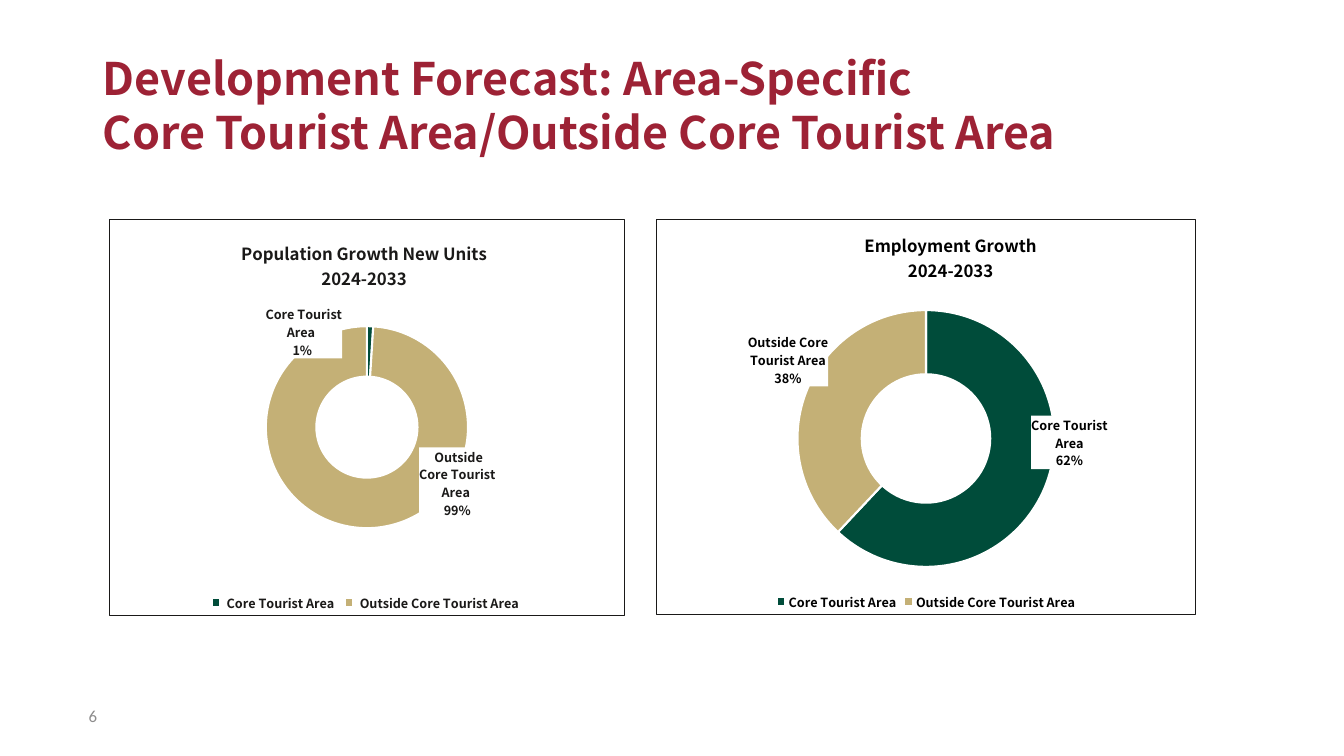
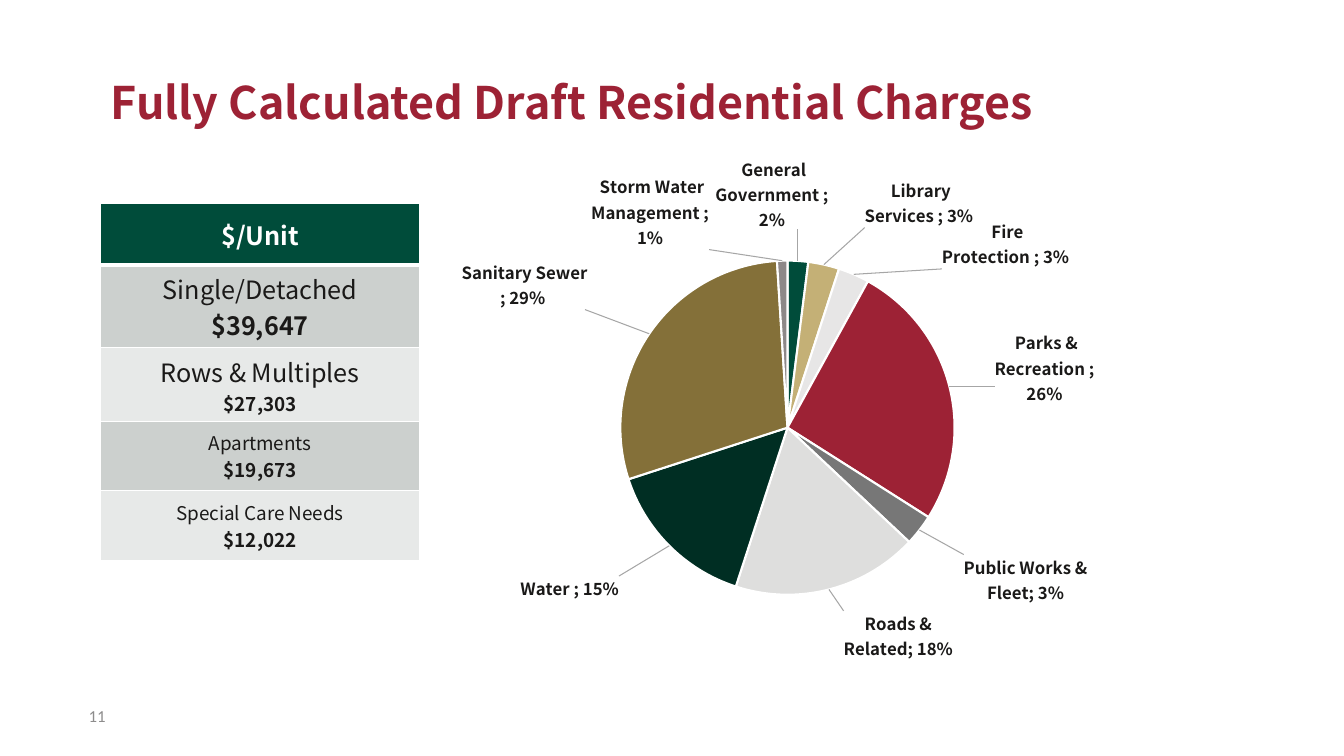
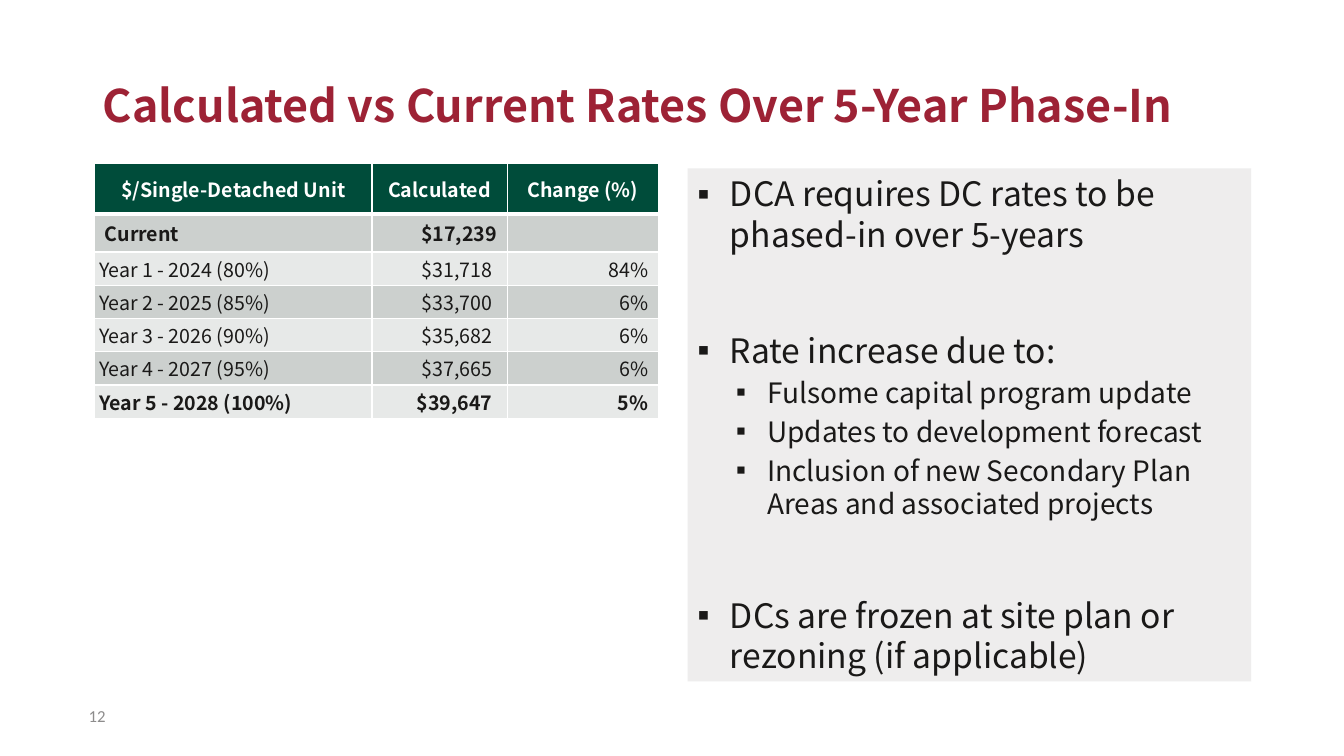
from copy import deepcopy

from pptx import Presentation
from pptx.chart.data import CategoryChartData
from pptx.dml.color import RGBColor
from pptx.enum.chart import XL_CHART_TYPE as ChartType, XL_LEGEND_POSITION as LegendPos
from pptx.enum.text import MSO_ANCHOR as Anchor, MSO_AUTO_SIZE as AutoSize, PP_ALIGN as Align
from pptx.oxml import parse_xml
from pptx.oxml.ns import nsdecls, qn
from pptx.util import Inches, Pt

SANS = "Noto Sans CJK JP"
NUMBER_FONT = BULLET_FONT = "Calibri"

INK = RGBColor(0x1A, 0x19, 0x18)
BLACK = RGBColor(0, 0, 0)
WHITE = RGBColor(0xFF, 0xFF, 0xFF)
CRIMSON = RGBColor(0x9D, 0x22, 0x35)
GREEN = RGBColor(0x00, 0x4C, 0x3A)
DARK_GREEN = RGBColor(0x00, 0x2E, 0x23)
GOLD = RGBColor(0xC4, 0xB0, 0x76)
BRONZE = RGBColor(0x84, 0x70, 0x39)
PALE = RGBColor(0xE7, 0xE6, 0xE6)
LIGHT_GREY = RGBColor(0xDE, 0xDE, 0xDD)
MID_GREY = RGBColor(0x77, 0x77, 0x77)
WARM_GREY = RGBColor(0x8D, 0x88, 0x88)
NUMBER_GREY = RGBColor(0x8D, 0x8C, 0x8C)
LEADER_GREY = RGBColor(0xA6, 0xA6, 0xA6)
BANDS = (RGBColor(0xCC, 0xD0, 0xCE), RGBColor(0xE7, 0xE9, 0xE8))

TITLE_ONLY, TITLE_AND_BODY = 5, 1


def write(frame, text, size=14, color=INK, bold=False, font=SANS, align=None, before=None):
    """Add one paragraph; a newline in the text becomes a line break."""
    paragraph = frame.paragraphs[-1]
    if paragraph.runs:
        paragraph = frame.add_paragraph()
    paragraph.alignment = align
    paragraph.space_before = None if before is None else Pt(before)
    for index, line in enumerate(text.split("\n")):
        if index:
            paragraph.add_line_break()
        run = paragraph.add_run()
        run.text = line
        run.font.size, run.font.bold, run.font.name = Pt(size), bold, font
        run.font.color.rgb = color
    for line_break in paragraph._p.findall(qn("a:br")):
        line_break.append(deepcopy(paragraph.runs[0]._r.rPr))
    return paragraph


def place(shape, box):
    shape.left, shape.top, shape.width, shape.height = map(Inches, box)


def new_slide(prs, layout, title, number, title_at=(0.92, 0.4)):
    slide = prs.slides.add_slide(prs.slide_layouts[layout])
    place(slide.shapes.title, (*title_at, 11.5, 1.27))
    frame = slide.shapes.title.text_frame
    frame.word_wrap, frame.auto_size = True, AutoSize.NONE
    frame.vertical_anchor = Anchor.MIDDLE
    write(frame, title, size=32, color=CRIMSON, bold=True, align=Align.LEFT)

    page = slide.shapes.add_textbox(*map(Inches, (0.78, 6.9, 1.11, 0.4))).text_frame
    page.word_wrap, page.vertical_anchor = True, Anchor.MIDDLE
    write(page, str(number), size=12, color=NUMBER_GREY, font=NUMBER_FONT)
    return slide


# Tables

def style_cell(cell, fill, bottom=1):
    """White borders, with the bottom one in its own width, and a solid fill."""
    properties = cell._tc.get_or_add_tcPr()
    for side, width in (("L", 1), ("R", 1), ("T", 1), ("B", bottom)):
        properties.append(parse_xml(
            f'<a:ln{side} {nsdecls("a")} w="{Pt(width)}"><a:solidFill>'
            f'<a:srgbClr val="{WHITE}"/></a:solidFill></a:ln{side}>'))
    cell.fill.solid()
    cell.fill.fore_color.rgb = fill
    cell.vertical_anchor = Anchor.MIDDLE


def set_margins(cell, left, right):
    cell.margin_left, cell.margin_right = Inches(left), Inches(right)
    cell.margin_top = cell.margin_bottom = 0


def banded_table(slide, at, columns, heights):
    table = slide.shapes.add_table(
        len(heights), len(columns), *map(Inches, (*at, sum(columns), sum(heights)))).table
    table.horz_banding = False
    for column, width in zip(table.columns, columns):
        column.width = Inches(width)
    for index, (row, height) in enumerate(zip(table.rows, heights)):
        row.height = Inches(height)
        for cell in row.cells:
            if index == 0:
                style_cell(cell, GREEN, bottom=3)
            else:
                style_cell(cell, BANDS[(index - 1) % 2])
    return table


def unit_table(slide, at):
    charges = [("Single/Detached", 18, "$39,647", 18),
               ("Rows & Multiples", 18, "$27,303", 13.5),
               ("Apartments", 13.5, "$19,673", 13.5),
               ("Special Care Needs", 13.5, "$12,022", 13.5)]
    table = banded_table(slide, at, [3.16], [0.61, 0.82, 0.73, 0.69, 0.69])
    write(table.cell(0, 0).text_frame, "$/Unit", size=18, color=WHITE, bold=True,
          align=Align.CENTER)
    for row, (unit, unit_size, charge, charge_size) in enumerate(charges, 1):
        frame = table.cell(row, 0).text_frame
        write(frame, unit, size=unit_size, align=Align.CENTER)
        write(frame, charge, size=charge_size, bold=True, align=Align.CENTER)


def phase_in_table(slide, at):
    heads = ("$/Single-Detached Unit", "Calculated", "Change (%)")
    rates = [("Current", "$17,239", ""),
             (" Year 1 - 2024 (80%)", "$31,718 ", "84%"),
             (" Year 2 - 2025 (85%)", "$33,700 ", "6%"),
             (" Year 3 - 2026 (90%)", "$35,682 ", "6%"),
             (" Year 4 - 2027 (95%)", "$37,665 ", "6%"),
             (" Year 5 - 2028 (100%)", "$39,647 ", "5%")]
    table = banded_table(slide, at, [2.75, 1.34, 1.5],
                         [0.5, 0.38] + [0.33] * (len(rates) - 1))
    for column, head in enumerate(heads):
        write(table.cell(0, column).text_frame, head, color=WHITE, bold=True,
              align=Align.CENTER)
    for row, rate in enumerate(rates, 1):
        strong = row in (1, len(rates))
        for column, text in enumerate(rate):
            cell = table.cell(row, column)
            if column:
                set_margins(cell, 0, 0.1)
            elif row > 1:
                set_margins(cell, 0, 0)
            if text:
                write(cell.text_frame, text, bold=strong,
                      align=Align.RIGHT if column else Align.LEFT)


# Charts

def manual_layout(x, y, w=None, h=None, mode=""):
    """Layout element in fractions of the chart; without a mode, x and y are offsets."""
    parts = ""
    if w is not None:
        parts += '<c:layoutTarget val="inner"/>'
    if mode:
        parts += f'<c:xMode val="{mode}"/><c:yMode val="{mode}"/>'
    parts += f'<c:x val="{x}"/><c:y val="{y}"/>'
    if w is not None:
        parts += f'<c:w val="{w}"/><c:h val="{h}"/>'
    return f'<c:layout {nsdecls("c")}><c:manualLayout>{parts}</c:manualLayout></c:layout>'


def set_layout(parent, index, layout):
    for old in parent.findall(qn("c:layout")):
        parent.remove(old)
    parent.insert(index, parse_xml(layout))


def frame_chart(chart, border):
    paint = f'<a:solidFill><a:srgbClr val="{border}"/></a:solidFill>' if border else "<a:noFill/>"
    chart._chartSpace.find(qn("c:chart")).addnext(parse_xml(
        f'<c:spPr {nsdecls("c", "a")}><a:noFill/><a:ln w="{Pt(0.75)}">{paint}</a:ln></c:spPr>'))


def label_slices(series, offsets, percent, separator, position="", fill=None, size=None,
                 leaders=False):
    """Show category and figure beside each slice, moved by its offset."""
    backing = (f'<c:spPr><a:solidFill><a:srgbClr val="{fill}"/></a:solidFill></c:spPr>'
               if fill else "")
    place_at = f'<c:dLblPos val="{position}"/>' if position else ""
    shown = (f'<c:numFmt formatCode="0%" sourceLinked="0"/>{backing}{place_at}'
             f'<c:showLegendKey val="0"/><c:showVal val="{int(not percent)}"/>'
             f'<c:showCatName val="1"/><c:showSerName val="0"/>'
             f'<c:showPercent val="{int(percent)}"/><c:showBubbleSize val="0"/>'
             f'<c:separator>{separator}</c:separator>')
    extent = ""
    if size:
        extent = ('<c:extLst><c:ext uri="{CE6537A1-D6FC-4f65-9D91-7224C49458BB}" '
                  'xmlns:c15="http://schemas.microsoft.com/office/drawing/2012/chart">'
                  f'<c15:layout><c:manualLayout><c:w val="{size[0]}"/><c:h val="{size[1]}"/>'
                  '</c:manualLayout></c15:layout></c:ext></c:extLst>')
    labels = "".join(
        f'<c:dLbl><c:idx val="{index}"/>{manual_layout(*offset)}{shown}{extent}</c:dLbl>'
        for index, offset in enumerate(offsets))
    lines = f'<c:showLeaderLines val="{int(leaders)}"/>'
    if leaders:
        lines += ('<c:leaderLines><c:spPr><a:ln w="9525"><a:solidFill>'
                  f'<a:srgbClr val="{LEADER_GREY}"/></a:solidFill></a:ln></c:spPr>'
                  '</c:leaderLines>')
    series._element.find(qn("c:cat")).addprevious(parse_xml(
        f'<c:dLbls {nsdecls("c", "a")}>{labels}{shown}{lines}</c:dLbls>'))


def round_chart(slide, kind, box, slices, plot_box, size, color=INK, border=None):
    """Pie or doughnut from (category, value, colour) slices."""
    data = CategoryChartData()
    data.categories = [category for category, _, _ in slices]
    data.add_series("Series 1", [value for _, value, _ in slices])
    chart = slide.shapes.add_chart(kind, *map(Inches, box), data).chart
    chart.has_title = chart.has_legend = False
    chart.font.size, chart.font.bold, chart.font.name = Pt(size), True, SANS
    chart.font.color.rgb = color
    frame_chart(chart, border)
    set_layout(chart._chartSpace.find(qn("c:chart")).find(qn("c:plotArea")), 0,
               manual_layout(*plot_box, mode="edge"))
    plot = chart.plots[0]
    plot.vary_by_categories = True
    for index, (_, _, fill) in enumerate(slices):
        look = plot.series[0].points[index].format
        look.fill.solid()
        look.fill.fore_color.rgb = fill
        look.line.color.rgb = WHITE
        look.line.width = Pt(1.5)
    return chart


def growth_doughnut(slide, box, title, title_at, slices, plot_box, offsets, color):
    chart = round_chart(slide, ChartType.DOUGHNUT, box, slices, plot_box, 9, color, border=INK)
    chart.has_title = True
    write(chart.chart_title.text_frame, title, size=12, color=color, bold=True)
    set_layout(chart.chart_title._element, 1, manual_layout(*title_at, mode="edge"))
    chart.has_legend = True
    legend = chart.legend
    legend.position, legend.include_in_layout = LegendPos.BOTTOM, False
    legend.font.size, legend.font.bold, legend.font.name = Pt(9), True, SANS
    legend.font.color.rgb = color
    plot = chart.plots[0]
    plot._element.find(qn("c:holeSize")).set("val", "75")
    label_slices(plot.series[0], offsets, percent=True, separator="\n", fill=WHITE,
                 size=(0.16, 0.14))


def charges_pie(slide, box):
    services = [(" General Government ", 0.02, GREEN, (-0.04, -0.05)),
                (" Library Services ", 0.03, GOLD, (0.06, -0.06)),
                (" Fire Protection ", 0.03, PALE, (0.13, 0)),
                (" Parks & Recreation ", 0.26, CRIMSON, (0.06, 0.04)),
                ("Public Works & Fleet", 0.03, MID_GREY, (0.06, 0.04)),
                ("Roads & Related", 0.18, LIGHT_GREY, (0.02, 0.03)),
                (" Water ", 0.15, DARK_GREEN, (-0.07, 0.05)),
                (" Sanitary Sewer ", 0.29, BRONZE, (-0.09, -0.04)),
                (" Storm Water Management ", 0.01, WARM_GREY, (-0.2, -0.01))]
    chart = round_chart(slide, ChartType.PIE, box, [service[:3] for service in services],
                        (0.24, 0.2, 0.52, 0.64), 12)
    label_slices(chart.plots[0].series[0], [service[3] for service in services],
                 percent=False, separator="; ", position="outEnd", leaders=True)


# List

def bullet(paragraph, left, hang):
    properties = paragraph._p.get_or_add_pPr()
    properties.set("marL", str(Inches(left)))
    properties.set("indent", str(-Inches(hang)))
    properties.append(parse_xml(f'<a:buFont {nsdecls("a")} typeface="{BULLET_FONT}"/>'))
    properties.append(parse_xml(f'<a:buChar {nsdecls("a")} char="▪"/>'))


def reasons_panel(panel, box):
    place(panel, box)
    panel.fill.solid()
    panel.fill.fore_color.rgb = PALE
    panel._element.spPr.find(qn("a:solidFill"))[0].append(
        parse_xml(f'<a:alpha {nsdecls("a")} val="70000"/>'))
    frame = panel.text_frame
    frame.word_wrap, frame.auto_size = True, AutoSize.NONE
    frame.vertical_anchor = Anchor.TOP
    points = [(0, "DCA requires DC rates to be phased-in over 5-years", 0),
              (0, "Rate increase due to:", 54),
              (1, "Fulsome capital program update", 3.8),
              (1, "Updates to development forecast", 3.8),
              (1, "Inclusion of new Secondary Plan Areas and associated projects", 3.8),
              (0, "DCs are frozen at site plan or rezoning (if applicable)", 53)]
    for level, text, before in points:
        paragraph = write(frame, text, size=(24, 20)[level], before=before, align=Align.LEFT)
        paragraph.level = level
        bullet(paragraph, *((0.32, 0.32), (0.69, 0.31))[level])


# Slides

def forecast_slide(prs):
    slide = new_slide(
        prs, TITLE_ONLY,
        "Development Forecast: Area-Specific \nCore Tourist Area/Outside Core Tourist Area", 6)
    growth_doughnut(
        slide, (1.08, 2.17, 5.12, 3.94), "Population Growth New Units\n2024-2033", (0.25, 0.04),
        [(" Core Tourist Area ", 1, GREEN), (" Outside Core Tourist Area ", 99, GOLD)],
        (0.3, 0.27, 0.4, 0.51), [(-0.13, -0.05), (0.18, -0.05)], INK)
    growth_doughnut(
        slide, (6.51, 2.17, 5.35, 3.93), "Employment Growth\n2024-2033", (0.38, 0.02),
        [("Core Tourist Area", 62, GREEN), ("Outside Core Tourist Area", 38, GOLD)],
        (0.26, 0.23, 0.48, 0.65), [(0.1, -0.08), (-0.09, -0.11)], BLACK)


def charges_slide(prs):
    slide = new_slide(prs, TITLE_ONLY, "Fully Calculated Draft Residential Charges", 11,
                      title_at=(1, 0.37))
    unit_table(slide, (1, 2.02))
    charges_pie(slide, (4.54, 1.55, 6.54, 5.18))


def rates_slide(prs):
    slide = new_slide(prs, TITLE_AND_BODY,
                      "Calculated vs Current Rates Over 5-Year Phase-In", 12)
    phase_in_table(slide, (0.94, 1.62))
    reasons_panel(slide.placeholders[1], (6.82, 1.67, 5.59, 5.09))


def main():
    prs = Presentation()
    prs.slide_width, prs.slide_height = Inches(13.33), Inches(7.5)
    forecast_slide(prs)
    charges_slide(prs)
    rates_slide(prs)
    prs.save("out.pptx")


if __name__ == "__main__":
    main()
